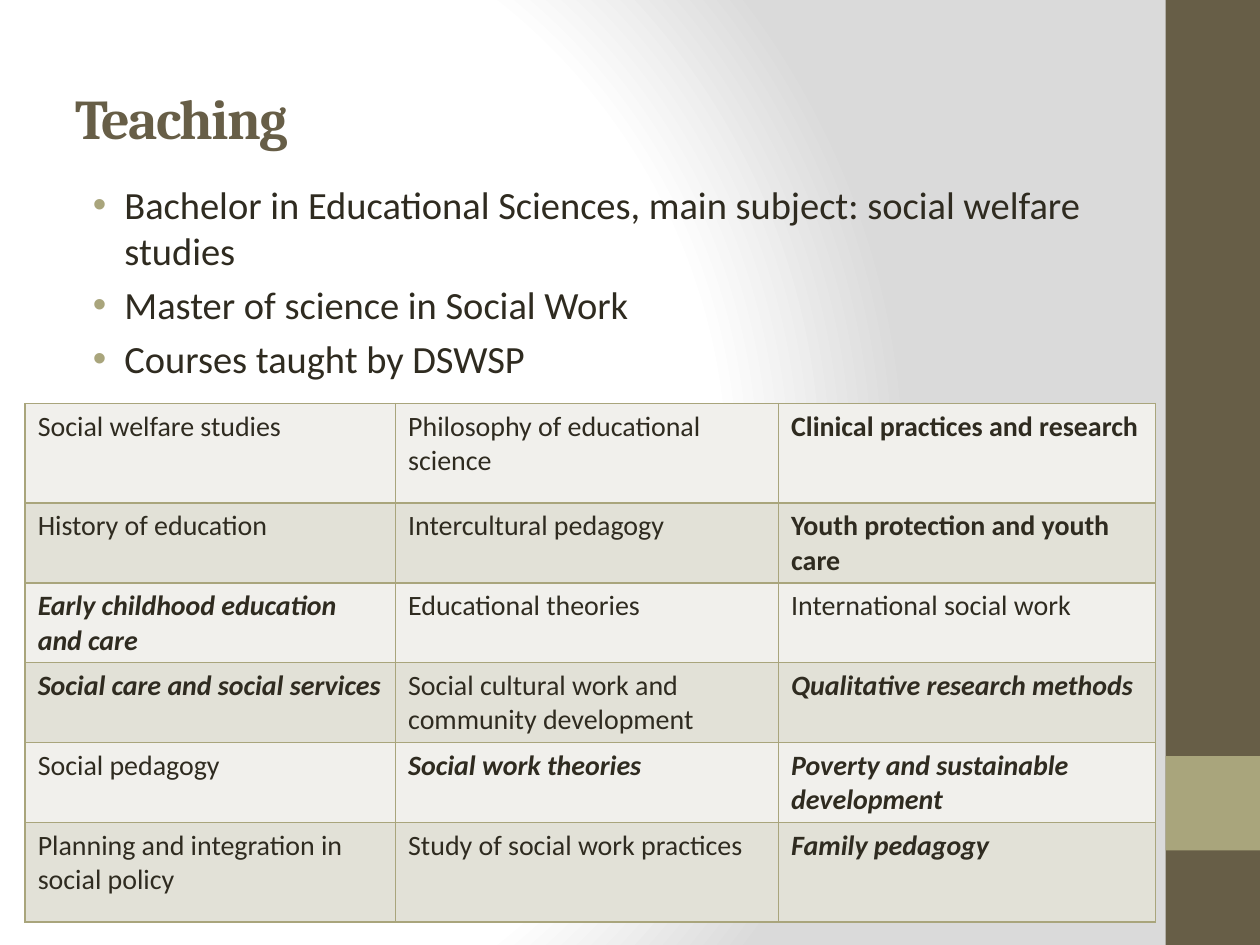
from dataclasses import dataclass

from lxml.etree import SubElement
from pptx import Presentation
from pptx.dml.color import RGBColor
from pptx.enum.shapes import MSO_SHAPE as Shp
from pptx.enum.text import MSO_ANCHOR as Anchor
from pptx.oxml import parse_xml
from pptx.oxml.ns import nsdecls, qn
from pptx.util import Inches, Pt

W, H = 10, 7.5
BROWN, SAGE, INK = "675E47", "A9A57C", "2F2B20"
BANDS = ("F1F0EC", "E2E1D7")
PLAIN, BOLD, STRONG = {}, {"bold": True}, {"bold": True, "italic": True}
COLS = (2.94, 3.04, 2.99)
ROWS = (0.79, 0.45, 0.45, 0.5, 0.5, 0.79)


@dataclass
class Box:
    """Place and size as shares of the slide."""
    x: float
    y: float
    w: float
    h: float

    def emu(self) -> tuple:
        """Return left, top, width and height as lengths."""
        return (Inches(self.x * W), Inches(self.y * H),
                Inches(self.w * W), Inches(self.h * H))


@dataclass
class Course:
    """A course name and its emphasis."""
    name: str
    style: dict


BARS = ((Box(0.925, 0, 0.075, 1), BROWN), (Box(0.925, 0.8, 0.075, 0.1), SAGE))
TITLE_BOX = Box(0.05, 0.04, 0.833, 0.167)
BODY_BOX = Box(0.051, 0.185, 0.9, 0.681)
TABLE_BOX = Box(0.02, 0.427, 0.897, 0.464)
POINTS = (
    "Bachelor in Educational Sciences, main subject: social welfare studies",
    "Master of science in Social Work",
    "Courses taught by DSWSP",
)
COURSES = (
    (Course("Social welfare studies", PLAIN),
     Course("Philosophy of educational science", PLAIN),
     Course("Clinical practices and research", BOLD)),
    (Course("History of education", PLAIN),
     Course("Intercultural pedagogy", PLAIN),
     Course("Youth protection and youth care", BOLD)),
    (Course("Early childhood education and care", STRONG),
     Course("Educational theories", PLAIN),
     Course("International social work", PLAIN)),
    (Course("Social care and social services", STRONG),
     Course("Social cultural work and community development", PLAIN),
     Course("Qualitative research methods", STRONG)),
    (Course("Social pedagogy", PLAIN),
     Course("Social work theories", STRONG),
     Course("Poverty and sustainable development", STRONG)),
    (Course("Planning and integration in social policy", PLAIN),
     Course("Study of social work practices", PLAIN),
     Course("Family pedagogy", STRONG)),
)


def color(hex_value: str) -> RGBColor:
    """Turn a hex string into a colour."""
    return RGBColor.from_string(hex_value)


def add_run(p, text: str, hex_value: str, **fmt):
    """Add a run with the given font values."""
    r = p.add_run()
    r.text = text
    r.font.color.rgb = color(hex_value)
    for name, value in fmt.items():
        setattr(r.font, name, value)
    return r


def set_background(s) -> None:
    """Give the slide a circular gradient from white to grey."""
    s.background.fill.gradient()
    old = s.element.find(f".//{qn('a:gradFill')}")
    stops = "".join(
        f'<a:gs pos="{pos * 1000}"><a:srgbClr val="{c}"/></a:gs>'
        for pos, c in ((0, "FFFFFF"), (75, "FFFFFF"), (100, "DADADA")))
    new = parse_xml(
        f'<a:gradFill {nsdecls("a")} rotWithShape="1"><a:gsLst>{stops}</a:gsLst>'
        '<a:path path="circle"><a:fillToRect l="20000" t="50000" r="100000" '
        'b="50000"/></a:path></a:gradFill>')
    old.getparent().replace(old, new)


def add_bar(s, box: Box, hex_value: str) -> None:
    """Draw a plain filled rectangle."""
    sp = s.shapes.add_shape(Shp.RECTANGLE, *box.emu())
    sp.shadow.inherit = False
    sp.fill.solid()
    sp.fill.fore_color.rgb = color(hex_value)
    sp.line.fill.background()


def add_frame(s, box: Box, anchor: Anchor):
    """Add a wrapping text box and return its text frame."""
    tf = s.shapes.add_textbox(*box.emu()).text_frame
    tf.word_wrap = True
    tf.vertical_anchor = anchor
    return tf


def add_title(s, text: str) -> None:
    """Write the slide heading."""
    p = add_frame(s, TITLE_BOX, Anchor.MIDDLE).paragraphs[0]
    r = add_run(p, text, BROWN, name="Cambria", size=Pt(32), bold=True)
    r.font._element.set("spc", "-100")


def add_bullets(s, points: tuple) -> None:
    """Write the bulleted points."""
    tf = add_frame(s, BODY_BOX, Anchor.TOP)
    for i, text in enumerate(points):
        p = tf.add_paragraph() if i else tf.paragraphs[0]
        p.space_before = Pt(4.4)
        pPr = p._p.get_or_add_pPr()
        pPr.set("marL", str(Inches(0.38)))
        pPr.set("indent", str(Inches(-0.25)))
        SubElement(SubElement(pPr, qn("a:buClr")), qn("a:srgbClr"), val=SAGE)
        SubElement(pPr, qn("a:buFont"), typeface="Arial")
        SubElement(pPr, qn("a:buChar"), char="•")
        add_run(p, text, INK, name="Calibri", size=Pt(22))


def set_borders(cell, hex_value: str) -> None:
    """Draw a one-point line on every side of a cell."""
    tcPr = cell._tc.get_or_add_tcPr()
    for side in "LRTB":
        ln = SubElement(tcPr, qn(f"a:ln{side}"), w=str(Pt(1)))
        fill = SubElement(ln, qn("a:solidFill"))
        SubElement(fill, qn("a:srgbClr"), val=hex_value)


def add_courses(s, courses: tuple) -> None:
    """Draw the table of courses with banded rows."""
    table = s.shapes.add_table(len(ROWS), len(COLS), *TABLE_BOX.emu()).table
    table.first_row = table.horz_banding = False
    for column, width in zip(table.columns, COLS):
        column.width = Inches(width)
    for i, (row, height) in enumerate(zip(table.rows, ROWS)):
        row.height = Inches(height)
        for cell, course in zip(row.cells, courses[i]):
            set_borders(cell, SAGE)
            cell.fill.solid()
            cell.fill.fore_color.rgb = color(BANDS[i % 2])
            add_run(cell.text_frame.paragraphs[0], course.name, INK,
                    name="Calibri", size=Pt(16), **course.style)


def main() -> None:
    """Build and save the slide."""
    prs = Presentation()
    prs.slide_width, prs.slide_height = Inches(W), Inches(H)
    s = prs.slides.add_slide(prs.slide_layouts[6])
    set_background(s)
    for box, hex_value in BARS:
        add_bar(s, box, hex_value)
    add_title(s, "Teaching")
    add_bullets(s, POINTS)
    add_courses(s, COURSES)
    prs.save("out.pptx")


if __name__ == "__main__":
    main()
